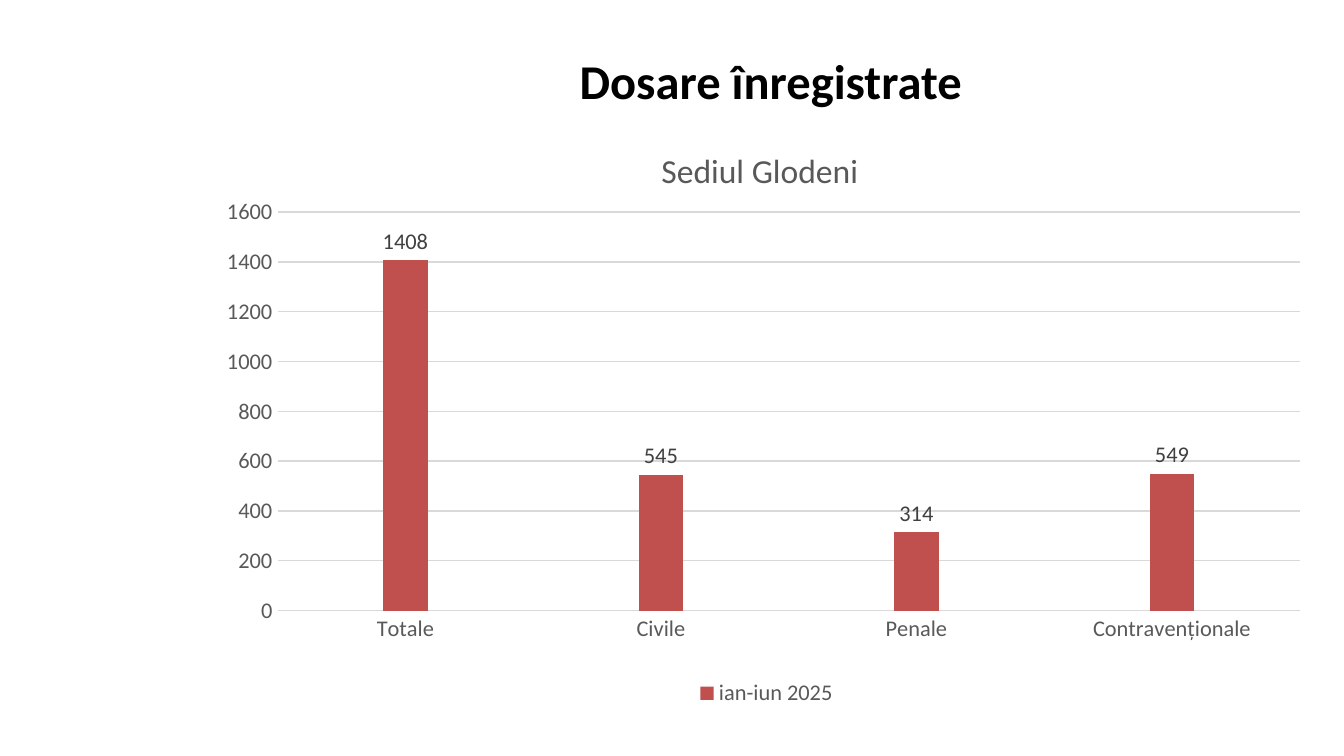
import pptx
import pptx.chart.data
import pptx.dml.color
import pptx.enum.chart
import pptx.enum.text
import pptx.oxml
import pptx.oxml.ns
import pptx.util

PX = 9144000 / 1344  # EMU per px
FONT = "Calibri"
COLORS = {
    "title": "000000", "axis": "595959", "label": "404040", "grid": "D9D9D9",
    "first": "4F81BD", "period": "C0504D", "third": "9BBB59",
}
CATEGORIES = ["Totale", "Civile", "Penale", "Contravenționale"]
# Empty series keep the bars narrow and centred in their categories
SERIES = [
    ("Series 1", [None] * 4, "first"),
    ("ian-iun 2025", [1408, 545, 314, 549], "period"),
    ("Series 3", [None] * 4, "third"),
]


def emu(box):
    return [round(v * PX) for v in box]


def rgb(name):
    return pptx.dml.color.RGBColor.from_string(COLORS[name])


def set_font(font, size, color, bold=False):
    font.name = FONT
    font.size = pptx.util.Pt(size)
    font.bold = bold
    font.color.rgb = rgb(color)


def set_line(fmt):
    fmt.line.color.rgb = rgb("grid")
    fmt.line.width = pptx.util.Pt(0.75)


def layout_xml(**places):
    """Manual chart layout, in fractions of the chart area."""
    target = '<c:layoutTarget val="inner"/>' if "w" in places else ""
    modes = "".join(f'<c:{k}Mode val="edge"/>' for k in "xy")
    values = "".join(f'<c:{k} val="{v}"/>' for k, v in places.items())
    return pptx.oxml.parse_xml(
        f'<c:layout {pptx.oxml.ns.nsdecls("c")}><c:manualLayout>'
        f"{target}{modes}{values}</c:manualLayout></c:layout>")


def add_title(s, box):
    tf = s.shapes.add_textbox(*emu(box)).text_frame
    tf.word_wrap = True
    tf.vertical_anchor = pptx.enum.text.MSO_ANCHOR.MIDDLE
    p = tf.paragraphs[0]
    p.alignment = pptx.enum.text.PP_ALIGN.CENTER
    r = p.add_run()
    r.text = "Dosare înregistrate"
    set_font(r.font, 26, "title", bold=True)


def style_axes(chart):
    for axis in (chart.category_axis, chart.value_axis):
        axis.major_tick_mark = pptx.enum.chart.XL_TICK_MARK.NONE
        axis.minor_tick_mark = pptx.enum.chart.XL_TICK_MARK.NONE
        set_font(axis.tick_labels.font, 12, "axis")
    set_line(chart.category_axis.format)
    value_axis = chart.value_axis
    value_axis.format.line.fill.background()
    value_axis.minimum_scale, value_axis.maximum_scale = 0, 1600
    value_axis.major_unit = 200
    set_line(value_axis.major_gridlines.format)


def style_legend(chart):
    chart.has_legend = True
    legend = chart.legend
    legend.position = pptx.enum.chart.XL_LEGEND_POSITION.BOTTOM
    legend.include_in_layout = False
    set_font(legend.font, 12, "axis")
    # Hide the entries of the empty series
    pos = legend._element.find(pptx.oxml.ns.qn("c:legendPos"))
    for idx in (2, 0):
        pos.addnext(pptx.oxml.parse_xml(
            f'<c:legendEntry {pptx.oxml.ns.nsdecls("c")}>'
            f'<c:idx val="{idx}"/><c:delete val="1"/></c:legendEntry>'))


def add_cases_chart(s, box):
    data = pptx.chart.data.CategoryChartData()
    data.categories = CATEGORIES
    for name, values, _ in SERIES:
        data.add_series(name, values)
    kind = pptx.enum.chart.XL_CHART_TYPE.COLUMN_CLUSTERED
    chart = s.shapes.add_chart(kind, *emu(box), data).chart
    set_font(chart.font, 10, "title")

    # Chart title
    chart.has_title = True
    r = chart.chart_title.text_frame.paragraphs[0].add_run()
    r.text = "Sediul Glodeni"
    set_font(r.font, 18, "axis")
    title = chart.chart_title._element
    for old in title.findall(pptx.oxml.ns.qn("c:layout")):
        title.remove(old)
    title.find(pptx.oxml.ns.qn("c:tx")).addnext(layout_xml(x=0.4, y=0.04))

    # Plot area and bars
    plot = chart.plots[0]
    plot.gap_width, plot.overlap = 219, -27
    plot.vary_by_categories = False
    area = plot._element.getparent()
    for old in area.findall(pptx.oxml.ns.qn("c:layout")):
        area.remove(old)
    area.insert(0, layout_xml(x=0.06, y=0.16, w=0.92, h=0.67))
    for series, (_, _, color) in zip(plot.series, SERIES):
        series.format.fill.solid()
        series.format.fill.fore_color.rgb = rgb(color)
        labels = series.data_labels
        labels.show_value = True
        labels.position = pptx.enum.chart.XL_LABEL_POSITION.OUTSIDE_END
        set_font(labels.font, 12, "label")

    style_axes(chart)
    style_legend(chart)


def main():
    prs = pptx.Presentation()
    prs.slide_width, prs.slide_height = emu((1344, 756))
    s = prs.slides.add_slide(prs.slide_layouts[6])
    add_title(s, (265, 44, 1012, 73))
    add_cases_chart(s, (211, 117, 1111, 595))
    prs.save("out.pptx")


if __name__ == "__main__":
    main()
